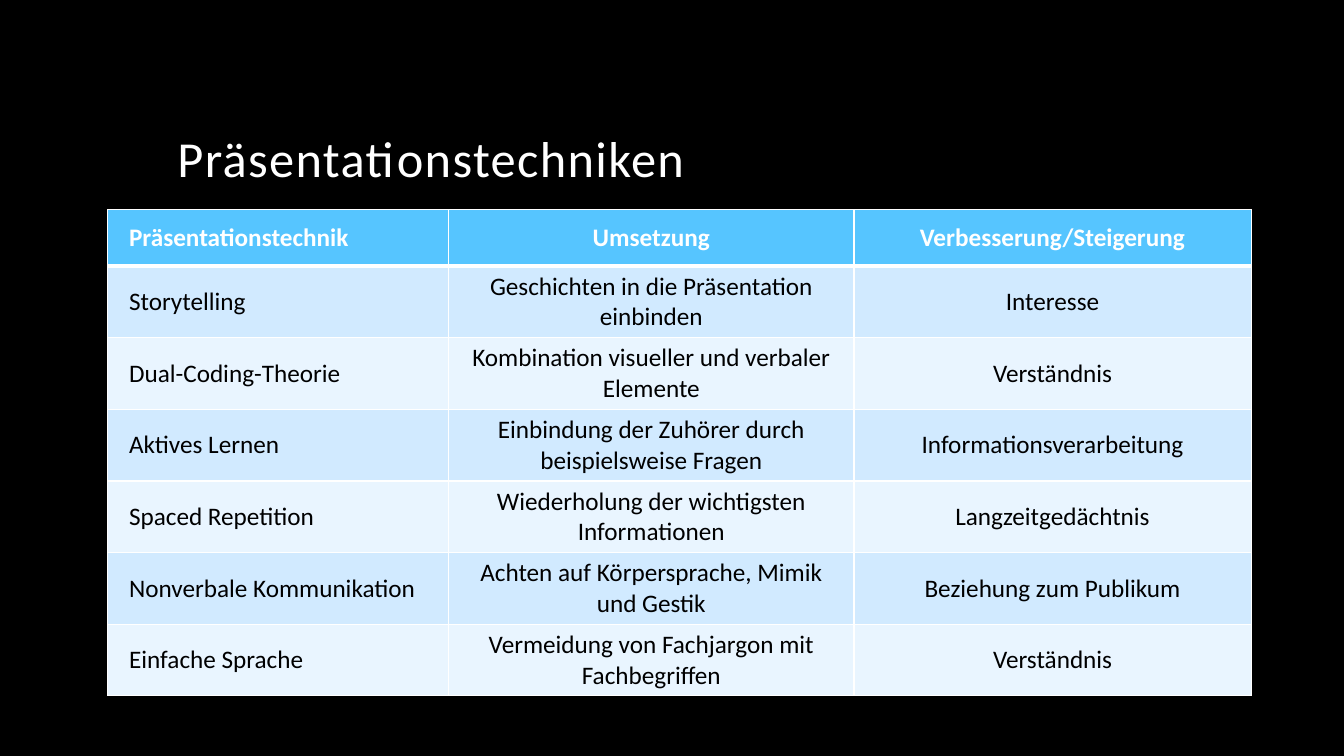
from dataclasses import dataclass

from lxml.etree import SubElement
from pptx import Presentation
from pptx.dml.color import RGBColor
from pptx.enum.text import MSO_ANCHOR, PP_ALIGN
from pptx.oxml.ns import qn
from pptx.util import Inches, Pt


@dataclass(frozen=True)
class Theme:
    face: str = "Calibri"
    back: str = "000000"
    light: str = "FFFFFF"
    dark: str = "000000"
    head: str = "56C5FF"
    bands: tuple = ("D1EAFF", "E9F5FF")
    title: int = 36
    body: int = 18
    track: int = 1
    thin: int = 1
    thick: int = 3


ROWS = [
    ("Präsentationstechnik", "Umsetzung", "Verbesserung/Steigerung"),
    ("Storytelling", "Geschichten in die Präsentation einbinden", "Interesse"),
    ("Dual-Coding-Theorie", "Kombination visueller und verbaler Elemente", "Verständnis"),
    ("Aktives Lernen", "Einbindung der Zuhörer durch beispielsweise Fragen",
     "Informationsverarbeitung"),
    ("Spaced Repetition", "Wiederholung der wichtigsten Informationen", "Langzeitgedächtnis"),
    ("Nonverbale Kommunikation", "Achten auf Körpersprache, Mimik und Gestik",
     "Beziehung zum Publikum"),
    ("Einfache Sprache", "Vermeidung von Fachjargon mit Fachbegriffen", "Verständnis"),
]
WIDTHS = (3.38, 4.02, 3.94)


class Deck:
    def __init__(self, theme):
        self.theme = theme
        self.file = Presentation()
        self.file.slide_width = Inches(13.33)
        self.file.slide_height = Inches(7.5)
        self.slide = self.file.slides.add_slide(self.file.slide_layouts[5])
        self.paint(self.slide.background.fill, theme.back)

    def paint(self, fill, color):
        fill.solid()
        fill.fore_color.rgb = RGBColor.from_string(color)

    def style(self, para, size, color, align, bold=False):
        para.alignment = align
        font = para.font
        font.name, font.size, font.bold = self.theme.face, Pt(size), bold
        font.color.rgb = RGBColor.from_string(color)

    def title(self, text, left, top, width, height):
        box = self.slide.shapes.title
        box.left, box.top = Inches(left), Inches(top)
        box.width, box.height = Inches(width), Inches(height)
        frame = box.text_frame
        frame.text = text
        frame.vertical_anchor = MSO_ANCHOR.BOTTOM
        para = frame.paragraphs[0]
        para.line_spacing = 0.9
        self.style(para, self.theme.title, self.theme.light, PP_ALIGN.LEFT)
        para.runs[0]._r.get_or_add_rPr().set("spc", str(self.theme.track * 100))

    def border(self, cell, side, width):
        props = cell._tc.get_or_add_tcPr()
        line = SubElement(props, qn(f"a:ln{side}"), w=str(Pt(width)))
        fill = SubElement(line, qn("a:solidFill"))
        SubElement(fill, qn("a:srgbClr"), val=self.theme.light)

    def cell(self, cell, text, row, col):
        look, head = self.theme, row == 0
        cell.text = text
        cell.vertical_anchor = MSO_ANCHOR.MIDDLE
        cell.margin_left = cell.margin_right = Inches(0.21)
        cell.margin_top = cell.margin_bottom = Inches(0.05)
        self.style(cell.text_frame.paragraphs[0], look.body,
                   look.light if head else look.dark,
                   PP_ALIGN.CENTER if col else PP_ALIGN.LEFT, head)
        # Borders must precede the fill in the cell properties.
        for side in "LRTB":
            heavy = (row, side) in ((0, "B"), (1, "T"))
            self.border(cell, side, look.thick if heavy else look.thin)
        self.paint(cell.fill, look.head if head else look.bands[(row - 1) % 2])

    def table(self, rows, widths, left, top, height, step):
        frame = self.slide.shapes.add_table(
            len(rows), len(widths), Inches(left), Inches(top),
            Inches(sum(widths)), Inches(height))
        grid = frame.table
        grid.horz_banding = False
        for col, width in zip(grid.columns, widths):
            col.width = Inches(width)
        for i, texts in enumerate(rows):
            grid.rows[i].height = Inches(step)
            for j, text in enumerate(texts):
                self.cell(grid.cell(i, j), text, i, j)
        frame.height = Inches(height)


def main():
    deck = Deck(Theme())
    deck.title("Präsentationstechniken", 1.66, 0.42, 10, 1.5)
    deck.table(ROWS, WIDTHS, 1.07, 2.08, 4.76, 0.56)
    deck.file.save("out.pptx")


if __name__ == "__main__":
    main()
